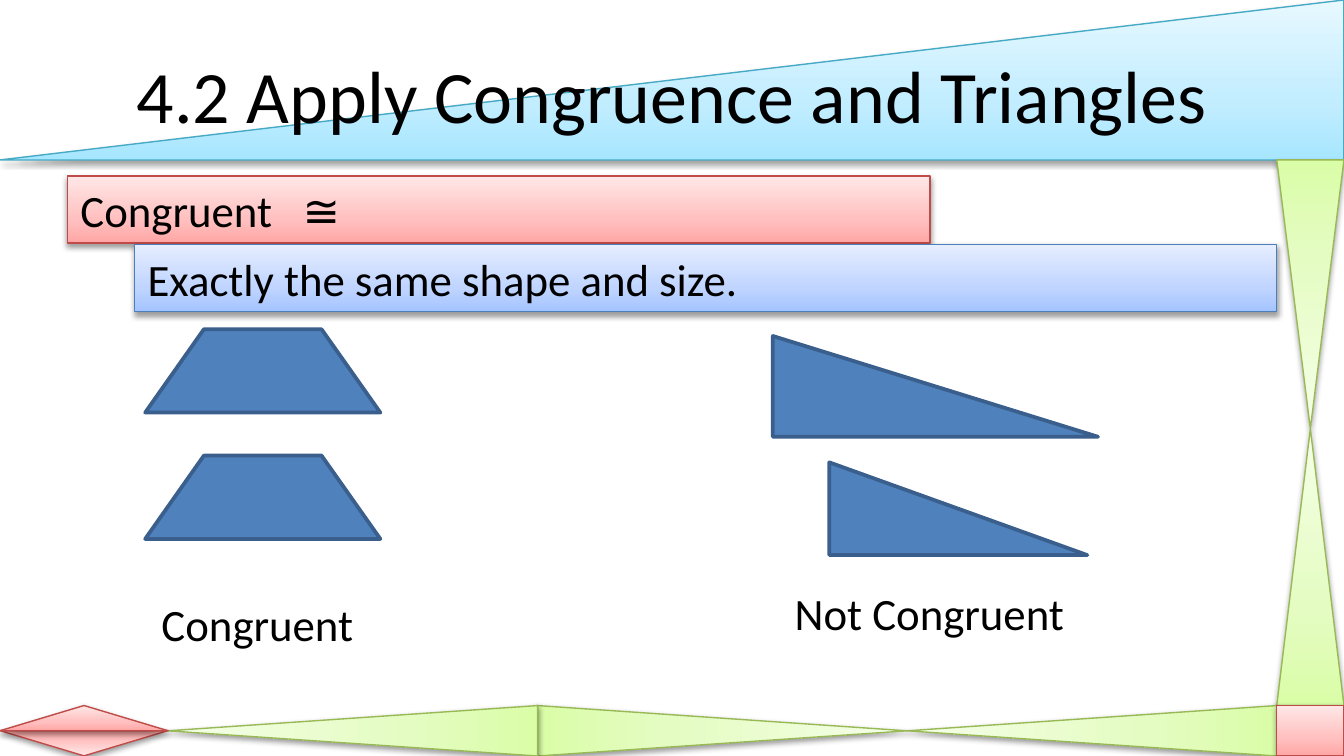
"""Build the congruence slide: framed title, definition banners and example shapes."""
from copy import deepcopy

from lxml import etree
from pptx import Presentation
from pptx.dml.color import RGBColor
from pptx.enum.shapes import MSO_SHAPE
from pptx.enum.text import MSO_ANCHOR, PP_ALIGN
from pptx.oxml.ns import qn
from pptx.util import Inches, Pt

RECTANGLE = MSO_SHAPE.RECTANGLE
TRIANGLE = MSO_SHAPE.ISOSCELES_TRIANGLE
RIGHT_TRIANGLE = MSO_SHAPE.RIGHT_TRIANGLE
TRAPEZOID = MSO_SHAPE.TRAPEZOID
LEFT, CENTER = PP_ALIGN.LEFT, PP_ALIGN.CENTER
MIDDLE = MSO_ANCHOR.MIDDLE

WIDTH, HEIGHT = 10, 5.625
FONT = "Calibri"
TITLE = "4.2 Apply Congruence and Triangles"
STOPS = (0, 0.35, 1)
PALETTES = {
    "aqua": (("A7E6FF", "C1EDFF", "E7F8FF"), "46AAC5"),
    "green": (("DAFDA7", "E4FCC2", "F5FFE7"), "98B955"),
    "red": (("FFA6A5", "FFC0BF", "FFE7E7"), "BF4C48"),
    "blue": (("A4C4FF", "BFD4FF", "E6EEFF"), "4B7EBC"),
}

HEADER = 1.19
SIDE = 0.5
FOOTER = 0.375
DIAMOND = 1.25
MIDWAY = 3.19
FOOTER_TOP = HEIGHT - FOOTER
SIDE_LEFT = WIDTH - SIDE
WEDGE = (SIDE_LEFT - DIAMOND) / 3

FRAME = [
    (RIGHT_TRIANGLE, (0, 0, WIDTH, HEADER), "aqua", 0, "flipH"),
    (TRIANGLE, (SIDE_LEFT, HEADER, SIDE, MIDWAY - HEADER), "green", 0, "flipV"),
    (TRIANGLE, (SIDE_LEFT, MIDWAY, SIDE, FOOTER_TOP - MIDWAY), "green", 0, None),
    *[(TRIANGLE, (DIAMOND + column * WEDGE, FOOTER_TOP, WEDGE, FOOTER), "green", turn, flip)
      for column, turn, flip in ((2, 270, None), (1, 90, "flipH"), (0, 270, None))],
    (RECTANGLE, (SIDE_LEFT, FOOTER_TOP, SIDE, FOOTER), "red", 0, None),
    (TRIANGLE, (0, FOOTER_TOP + FOOTER / 2, DIAMOND, FOOTER / 2), "red", 0, "flipV"),
    (TRIANGLE, (0, FOOTER_TOP, DIAMOND, FOOTER / 2), "red", 0, None),
]
BANNERS = [
    ("Congruent   ≅", (0.5, 1.31, 6.42, 0.5), "red"),
    ("Exactly the same shape and size.", (1, 1.82, 8.5, 0.5), "blue"),
]
EXAMPLES = [
    (TRAPEZOID, (1.08, 2.45, 1.75, 0.62)),
    (RIGHT_TRIANGLE, (5.75, 2.5, 2.42, 0.75)),
    (RIGHT_TRIANGLE, (6.17, 3.44, 1.92, 0.69)),
    (TRAPEZOID, (1.08, 3.39, 1.75, 0.62)),
]
CAPTIONS = [
    ("Congruent", (0.58, 4.39, 2.67, 0.5)),
    ("Not Congruent", (5.58, 4.31, 2.67, 0.5)),
]


def color(value):
    return RGBColor.from_string(value)


def inches(box):
    return [Inches(length) for length in box]


def write(shape, text, size, align):
    frame = shape.text_frame
    frame.word_wrap = True
    frame.text = text
    para = frame.paragraphs[0]
    para.alignment = align
    font = para.runs[0].font
    font.name, font.size = FONT, Pt(size)
    font.color.rgb = color("000000")


def add_outlined(page, kind, box, line, weight):
    shape = page.shapes.add_shape(kind, *inches(box))
    shape.shadow.inherit = False
    shape.line.color.rgb = color(line)
    shape.line.width = Pt(weight)
    return shape


def add_glossy(page, kind, box, palette, turn=0, flip=None):
    tints, line = PALETTES[palette]
    left, top, width, height = box
    if turn in (90, 270):
        shift = (width - height) / 2
        box = (left + shift, top - shift, height, width)
    shape = add_outlined(page, kind, box, line, 0.75)
    shape.rotation = turn
    properties = shape.element.spPr
    if flip:
        properties.find(qn("a:xfrm")).set(flip, "1")
    shape.fill.gradient()
    shape.fill.gradient_angle = 90
    stops = properties.find(qn("a:gradFill")).find(qn("a:gsLst"))
    stops.append(deepcopy(stops[0]))
    for stop, position, tint in zip(shape.fill.gradient_stops, STOPS, tints):
        stop.position = position
        stop.color.rgb = color(tint)
    effects = properties.find(qn("a:effectLst"))
    shadow = etree.SubElement(effects, qn("a:outerShdw"), blurRad="40000", dist="20000",
                              dir="5400000", rotWithShape="0")
    black = etree.SubElement(shadow, qn("a:srgbClr"), val="000000")
    etree.SubElement(black, qn("a:alpha"), val="38000")
    return shape


def main():
    deck = Presentation()
    deck.slide_width, deck.slide_height = Inches(WIDTH), Inches(HEIGHT)
    page = deck.slides.add_slide(deck.slide_layouts[5])

    for kind, box, palette, turn, flip in FRAME:
        add_glossy(page, kind, box, palette, turn, flip)

    title = page.shapes.title
    title.left, title.top, title.width, title.height = inches((0.5, 0.23, 9, 0.94))
    write(title, TITLE, 39.6, CENTER)
    title.text_frame.vertical_anchor = MIDDLE
    page.shapes.element.append(title.element)

    for text, box, palette in BANNERS:
        write(add_glossy(page, RECTANGLE, box, palette), text, 24, LEFT)

    for kind, box in EXAMPLES:
        shape = add_outlined(page, kind, box, "3A5F8C", 2)
        shape.fill.solid()
        shape.fill.fore_color.rgb = color("4F81BD")
        if kind == TRAPEZOID:
            shape.adjustments[0] = 0.705

    for text, box in CAPTIONS:
        write(page.shapes.add_textbox(*inches(box)), text, 24, CENTER)

    deck.save("out.pptx")


if __name__ == "__main__":
    main()
